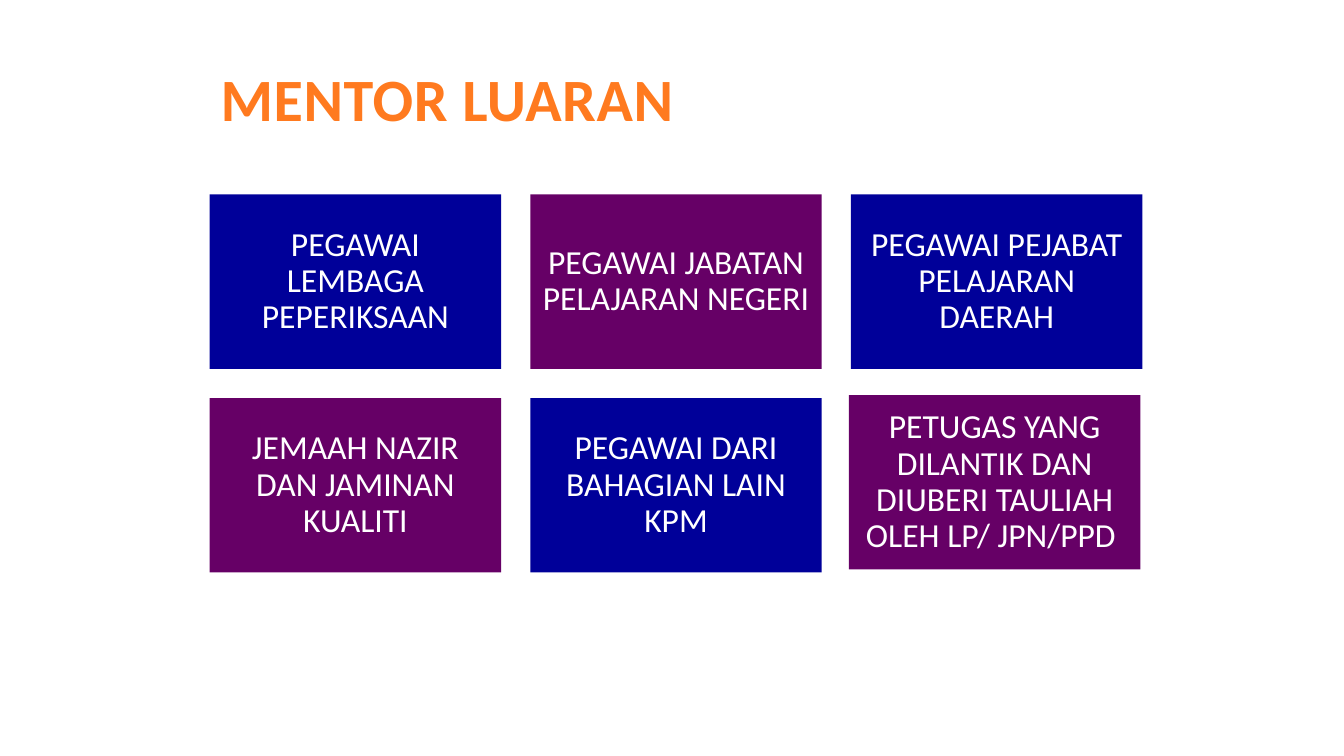
from pptx import Presentation
from pptx.dml.color import RGBColor
from pptx.enum import shapes, text
from pptx.util import Inches, Pt

ORANGE = RGBColor(0xFF, 0x7A, 0x1F)
NAVY = RGBColor(0x00, 0x00, 0x99)
PURPLE = RGBColor(0x66, 0x00, 0x66)
WHITE = RGBColor(0xFF, 0xFF, 0xFF)

MENTORS = [
    "PEGAWAI LEMBAGA PEPERIKSAAN",
    "PEGAWAI JABATAN PELAJARAN NEGERI",
    "PEGAWAI PEJABAT PELAJARAN DAERAH",
    "JEMAAH NAZIR DAN JAMINAN KUALITI",
    "PEGAWAI DARI BAHAGIAN LAIN KPM",
    "PETUGAS YANG DILANTIK DAN DIUBERI TAULIAH OLEH LP/ JPN/PPD ",
]
NUDGES = {5: (-0.02, -0.03)}


def write(sp, content, size, color):
    """Put one vertically centred paragraph in a shape and return it."""
    tf = sp.text_frame
    tf.word_wrap = True
    tf.vertical_anchor = text.MSO_ANCHOR.MIDDLE
    p = tf.paragraphs[0]
    p.text = content
    p.font.name = "Calibri"
    p.font.size = Pt(size)
    p.font.color.rgb = color
    return p


def add_title(s, left, top, width, height):
    """Add the slide heading in the given box."""
    sp = s.shapes.add_textbox(Inches(left), Inches(top), Inches(width), Inches(height))
    p = write(sp, "MENTOR LUARAN", 42.9, ORANGE)
    p.font.bold = True
    p.runs[0].font._element.set("spc", "50")


def add_mentor(s, left, top, width, height, label, fill):
    """Add one coloured mentor tile."""
    sp = s.shapes.add_shape(shapes.MSO_SHAPE.RECTANGLE, Inches(left), Inches(top),
                            Inches(width), Inches(height))
    sp.shadow.inherit = False
    sp.fill.solid()
    sp.fill.fore_color.rgb = fill
    sp.line.fill.background()
    tf = sp.text_frame
    tf.margin_left = tf.margin_right = tf.margin_top = tf.margin_bottom = Inches(0.1)
    p = write(sp, label, 24, WHITE)
    p.alignment = text.PP_ALIGN.CENTER
    p.line_spacing = 0.9


def add_mentor_grid(s, left, top, width, height, columns=3, gap=0.29):
    """Fill the box with mentor tiles in alternating colours."""
    rows = len(MENTORS) // columns
    tile_w = (width - gap * (columns - 1)) / columns
    tile_h = (height - gap * (rows - 1)) / rows
    for i, label in enumerate(MENTORS):
        row, col = divmod(i, columns)
        dx, dy = NUDGES.get(i, (0, 0))
        add_mentor(s, left + col * (tile_w + gap) + dx, top + row * (tile_h + gap) + dy,
                   tile_w, tile_h, label, PURPLE if i % 2 else NAVY)


def main():
    """Build and save the slide."""
    prs = Presentation()
    prs.slide_width, prs.slide_height = Inches(13.33), Inches(7.5)
    s = prs.slides.add_slide(prs.slide_layouts[6])
    add_title(s, 2.09, 0.58, 9, 0.78)
    add_mentor_grid(s, 2.08, 1.93, 9.25, 3.75)
    prs.save("out.pptx")


if __name__ == "__main__":
    main()
